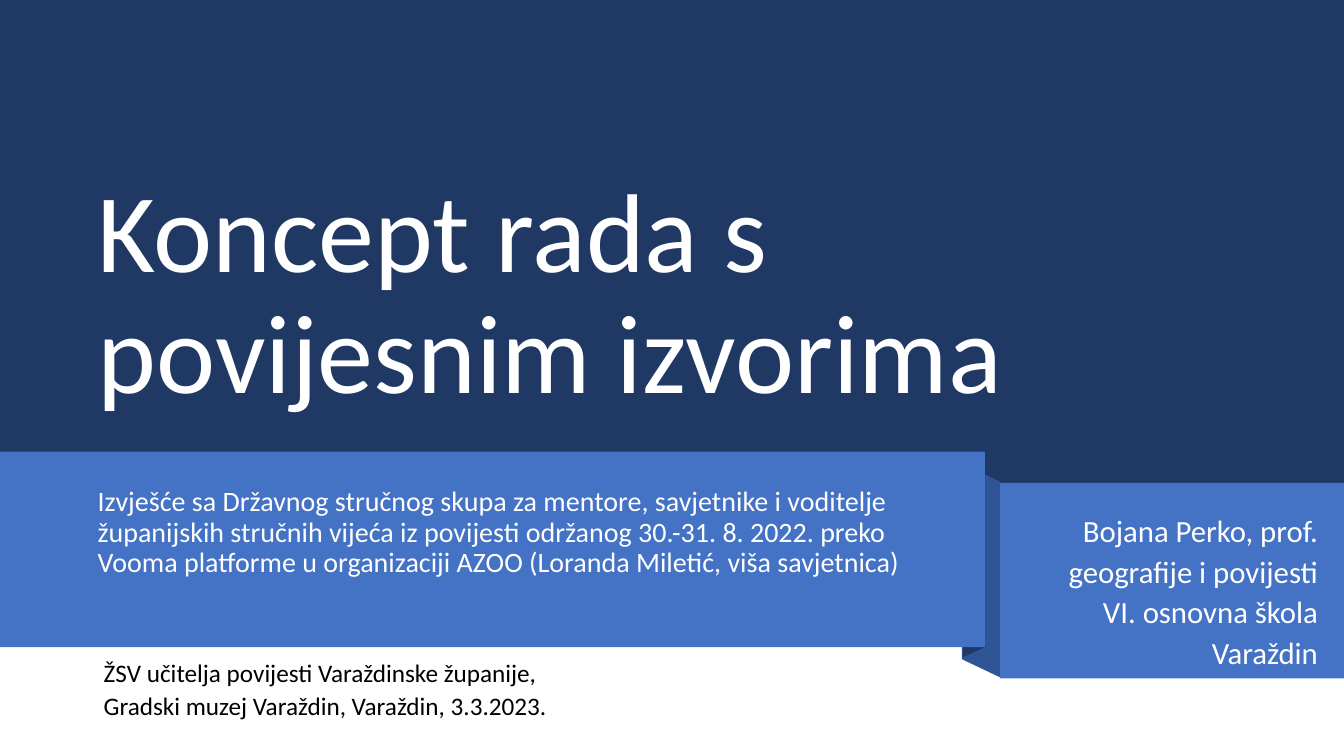
from pptx import Presentation
from pptx.dml.color import RGBColor
from pptx.enum.shapes import MSO_SHAPE
from pptx.enum.text import MSO_ANCHOR, PP_ALIGN
from pptx.util import Inches, Pt

RECT = MSO_SHAPE.RECTANGLE
TOP, BOTTOM = MSO_ANCHOR.TOP, MSO_ANCHOR.BOTTOM
LEFT, RIGHT = PP_ALIGN.LEFT, PP_ALIGN.RIGHT
FONT = "Calibri"
NAVY, BLUE, FOLD, WHITE, BLACK = "203864", "4472C4", "2F5597", "FFFFFF", "000000"
SLIDE_W, SLIDE_H = 13.33, 7.5
BAND_H = 1.94


def rgb(value):
    return RGBColor.from_string(value)


def paint(sp, color):
    """Give a shape a flat fill without line or shadow."""
    sp.shadow.inherit = False
    sp.fill.solid()
    sp.fill.fore_color.rgb = rgb(color)
    sp.line.fill.background()


def add_rect(s, box, color):
    paint(s.shapes.add_shape(RECT, *map(Inches, box)), color)


def add_fold(s, points, color):
    builder = s.shapes.build_freeform(*map(Inches, points[0]), scale=1.0)
    builder.add_line_segments([tuple(map(Inches, pt)) for pt in points[1:]])
    paint(builder.convert_to_shape(), color)


def add_text(s, box, lines, size, color, anchor=TOP, **paragraph_format):
    tf = s.shapes.add_textbox(*map(Inches, box)).text_frame
    tf.word_wrap = True
    tf.vertical_anchor = anchor
    for i, line in enumerate(lines):
        p = tf.paragraphs[0] if i == 0 else tf.add_paragraph()
        for name, value in paragraph_format.items():
            setattr(p, name, value)
        r = p.add_run()
        r.text = line
        for name, value in {"name": FONT, "size": Pt(size)}.items():
            setattr(r.font, name, value)
        r.font.color.rgb = rgb(color)


def title_panel(s, x, y, w, h):
    add_rect(s, (x, y, w, h), NAVY)
    add_text(s, (x + 0.87, y + 0.7, 9.57, 3.49), ["Koncept rada s povijesnim izvorima"],
             80, WHITE, BOTTOM, alignment=LEFT, line_spacing=0.9)


def ribbon_folds(s, x, y, w, h):
    """Draw the two slanted faces that join the bands at x and x + w."""
    back = x - 0.23
    add_fold(s, [(x + w, y + 0.3 + h), (back, y + 0.12 + h),
                 (back, y + 0.12), (x + w, y + 0.3)], FOLD)
    add_fold(s, [(x, y + h), (x - 0.22, y + 0.1 + h),
                 (x - 0.22, y + 0.1), (x, y)], NAVY)


def subtitle_band(s, x, y, w, h):
    add_rect(s, (x, y, w, h), BLUE)
    add_text(s, (x + 0.87, y + 0.31, 8.72, 1.4),
             ["Izvješće sa Državnog stručnog skupa za mentore, savjetnike i voditelje "
              "županijskih stručnih vijeća iz povijesti održanog 30.-31. 8. 2022. preko "
              "Vooma platforme u organizaciji AZOO (Loranda Miletić, viša savjetnica)"],
             20, WHITE, alignment=LEFT, line_spacing=0.9, space_before=Pt(10))


def author_band(s, x, y, w, h):
    add_rect(s, (x, y, w, h), BLUE)
    add_text(s, (x - 0.16, y + 0.2, w, 1.71),
             ["Bojana Perko, prof. geografije i povijesti", "VI. osnovna škola Varaždin"],
             22, WHITE, alignment=RIGHT, line_spacing=1.1)


def event_note(s, x, y, w, h):
    add_text(s, (x, y, w, h),
             ["ŽSV učitelja povijesti Varaždinske županije,",
              "Gradski muzej Varaždin, Varaždin, 3.3.2023."],
             18, BLACK, alignment=LEFT, line_spacing=1.1)


def main():
    prs = Presentation()
    prs.slide_width, prs.slide_height = Inches(SLIDE_W), Inches(SLIDE_H)
    s = prs.slides.add_slide(prs.slide_layouts[6])
    band_y, band_end, author_x = 4.48, 9.77, 9.92
    title_panel(s, 0, 0, SLIDE_W, 4.98)
    ribbon_folds(s, band_end, band_y, author_x - band_end, BAND_H)
    subtitle_band(s, 0, band_y, band_end, BAND_H)
    author_band(s, author_x, 4.79, SLIDE_W - author_x, BAND_H)
    event_note(s, 0.93, 6.44, 8.91, 0.75)
    prs.save("out.pptx")


if __name__ == "__main__":
    main()
